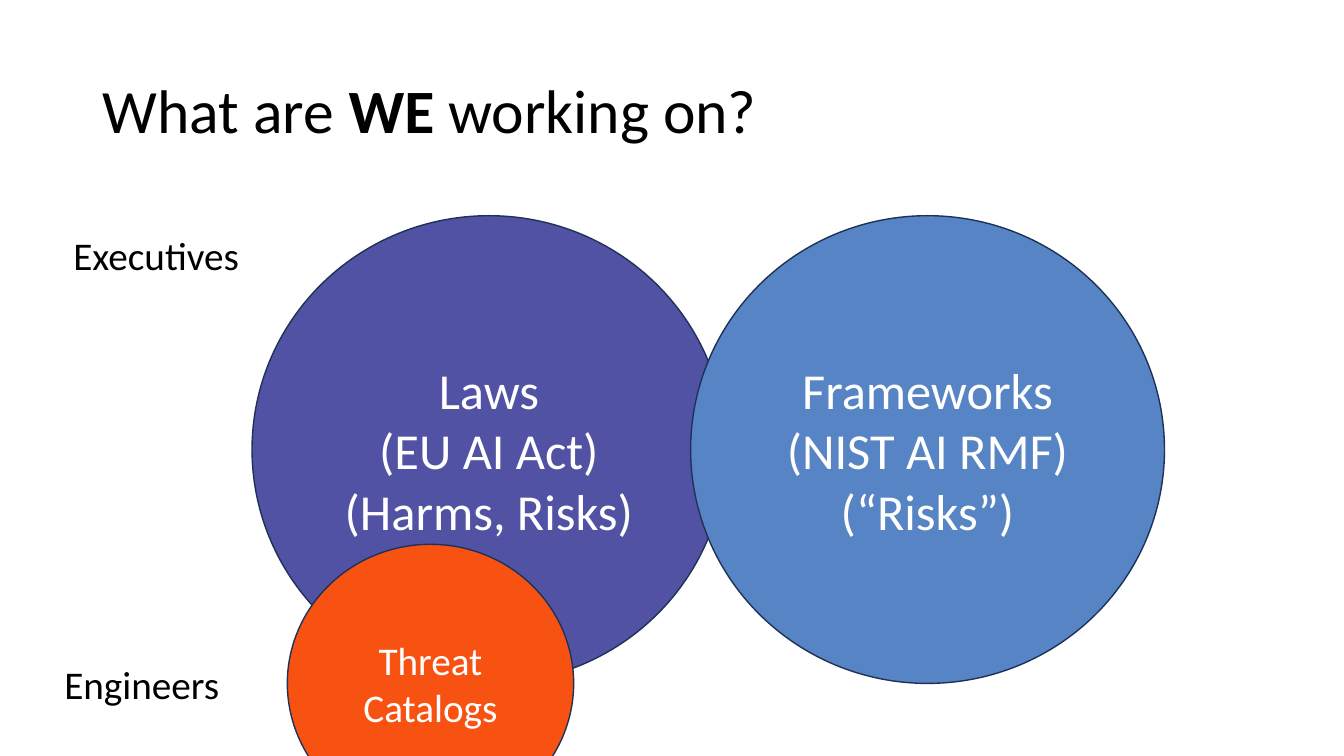
from pptx import Presentation
from pptx.dml.color import RGBColor
from pptx.enum.shapes import MSO_SHAPE
from pptx.enum.text import MSO_ANCHOR, MSO_AUTO_SIZE, PP_ALIGN
from pptx.util import Inches, Pt

OVAL = MSO_SHAPE.OVAL
MIDDLE = MSO_ANCHOR.MIDDLE
LEFT, CENTER = PP_ALIGN.LEFT, PP_ALIGN.CENTER
NO_FIT, GROW = MSO_AUTO_SIZE.NONE, MSO_AUTO_SIZE.SHAPE_TO_FIT_TEXT
TITLE_ONLY = 5


def rgb(value):
    return RGBColor.from_string(value)


class SlideBuilder:
    font = "Calibri"
    dark, light, outline = "000000", "FFFFFF", "1E3256"

    def __init__(self, slide):
        self.slide = slide

    def style(self, r, size, color, bold=False):
        r.font.name = self.font
        r.font.size = Pt(size)
        r.font.bold = bold
        r.font.color.rgb = rgb(color)

    def title(self, parts, left, top, width, height):
        sp = self.slide.shapes.title
        sp.left, sp.top = Inches(left), Inches(top)
        sp.width, sp.height = Inches(width), Inches(height)
        tf = sp.text_frame
        tf.auto_size = NO_FIT
        tf.vertical_anchor = MIDDLE
        p = tf.paragraphs[0]
        p.alignment = LEFT
        p.line_spacing = 0.9
        for text, bold in parts:
            r = p.add_run()
            r.text = text
            self.style(r, 44, self.dark, bold)

    def circle(self, text, left, top, width, height, fill, size):
        sp = self.slide.shapes.add_shape(
            OVAL, Inches(left), Inches(top), Inches(width), Inches(height))
        sp.shadow.inherit = False
        sp.fill.solid()
        sp.fill.fore_color.rgb = rgb(fill)
        sp.line.color.rgb = rgb(self.outline)
        sp.line.width = Pt(1)
        tf = sp.text_frame
        tf.text = text
        tf.word_wrap = True
        tf.vertical_anchor = MIDDLE
        for p in tf.paragraphs:
            p.alignment = CENTER
            self.style(p.runs[0], size, self.light)

    def label(self, text, left, top, width, height):
        sp = self.slide.shapes.add_textbox(
            Inches(left), Inches(top), Inches(width), Inches(height))
        tf = sp.text_frame
        tf.text = text
        tf.word_wrap = False
        tf.auto_size = GROW
        self.style(tf.paragraphs[0].runs[0], 28, self.dark)


def main():
    prs = Presentation()
    prs.slide_width, prs.slide_height = Inches(13.33), Inches(7.5)
    s = SlideBuilder(prs.slides.add_slide(prs.slide_layouts[TITLE_ONLY]))

    # Title
    s.title([("What are ", False), ("WE", True), (" working on?", False)],
            0.92, 0.4, 11.5, 1.45)

    # Overlapping circles, back to front
    s.circle("Laws\n(EU AI Act)\n(Harms, Risks)",
             2.5, 2.14, 4.7, 4.64, "5252A4", 36)
    s.circle("Frameworks\n(NIST AI RMF)\n(“Risks”)",
             6.85, 2.14, 4.7, 4.64, "5684C4", 36)
    s.circle("Threat\nCatalogs", 2.85, 5.4, 2.84, 2.76, "F85213", 28)

    # Audience labels
    s.label("Engineers", 0.54, 6.5, 1.87, 0.57)
    s.label("Executives", 0.63, 2.25, 2, 0.57)

    prs.save("out.pptx")


if __name__ == "__main__":
    main()
